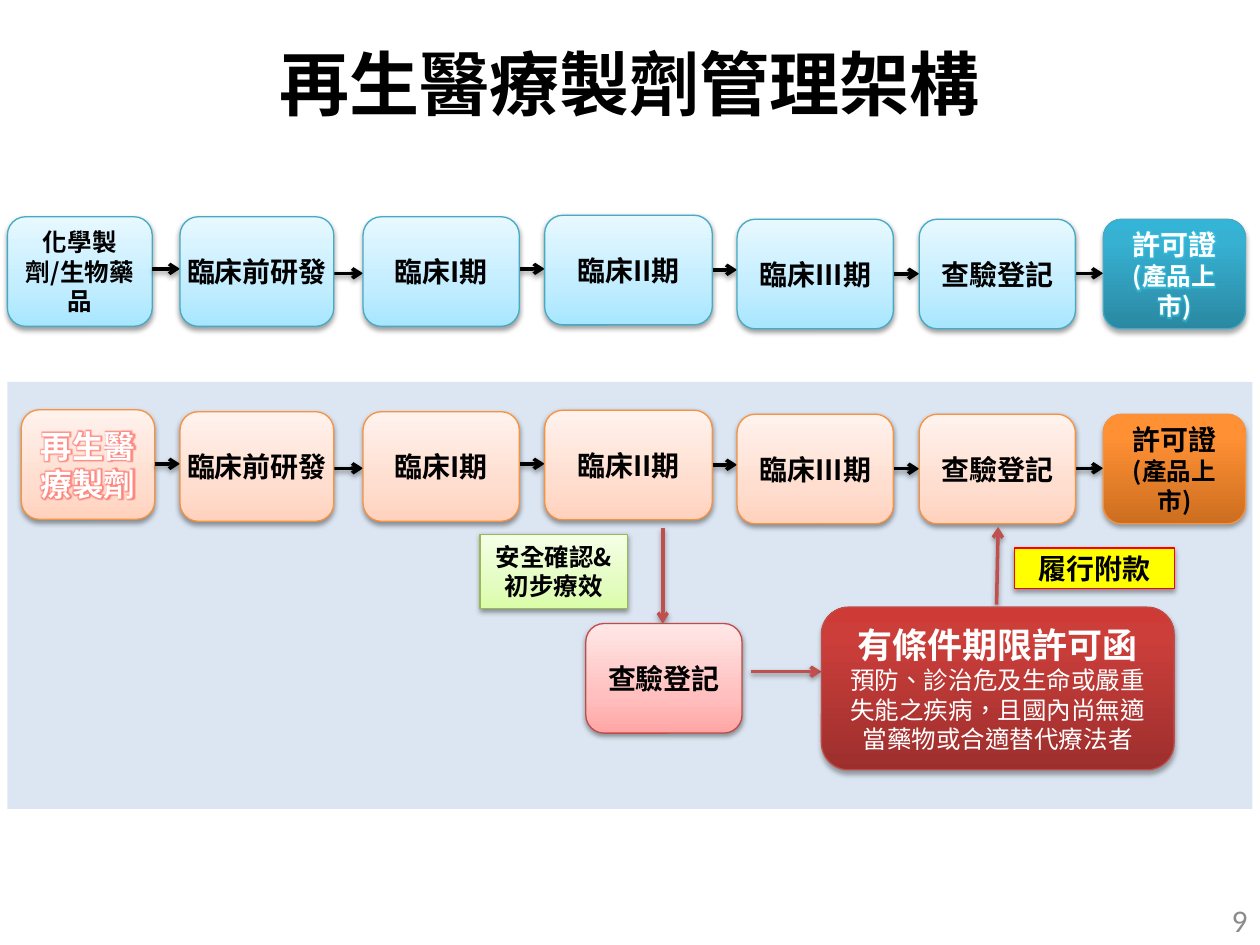
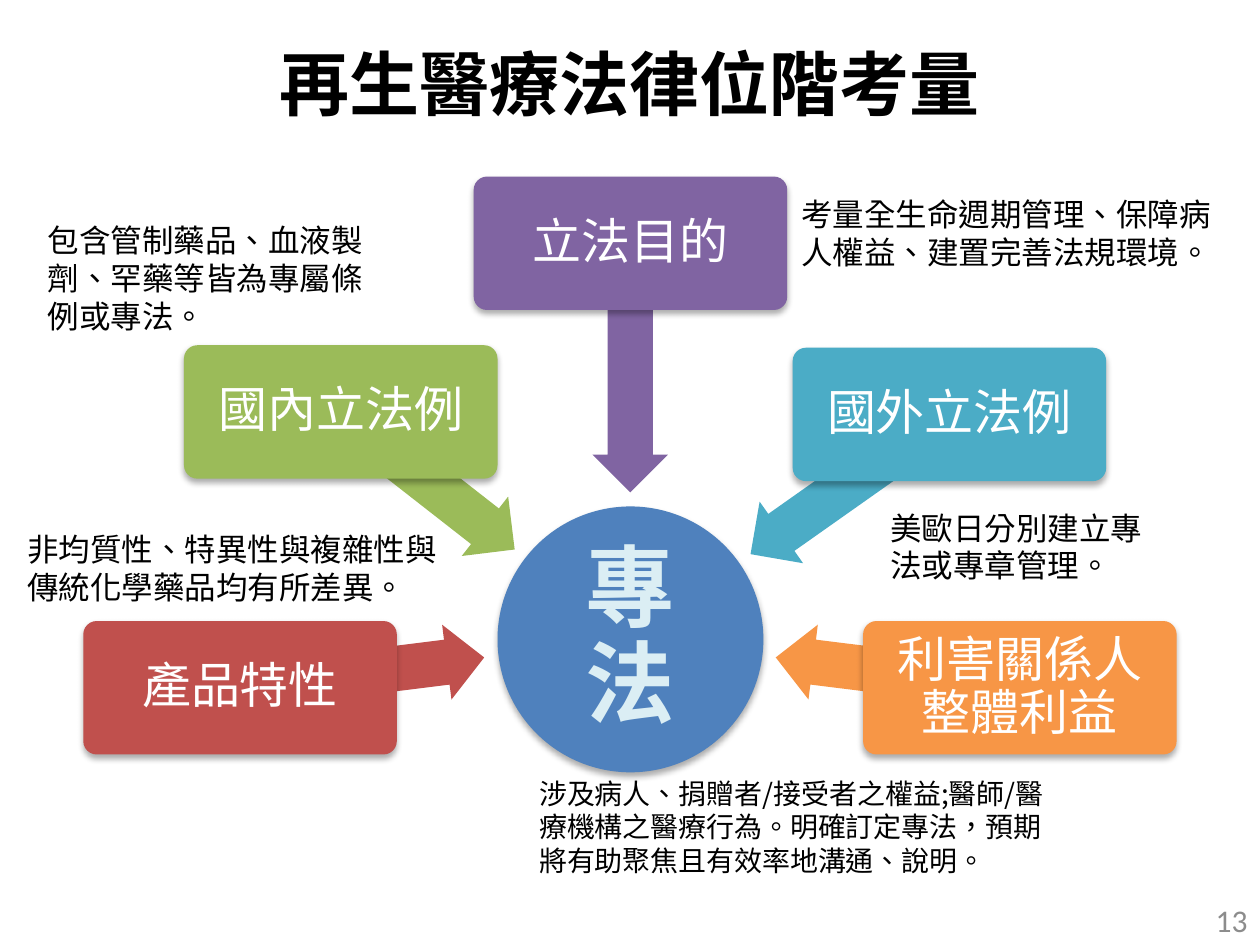
from lxml.etree import SubElement
from pptx import Presentation
from pptx.dml.color import RGBColor
from pptx.enum.shapes import MSO_CONNECTOR, MSO_SHAPE
from pptx.enum.text import MSO_ANCHOR, PP_ALIGN
from pptx.oxml import parse_xml
from pptx.oxml.ns import nsdecls, qn
from pptx.util import Cm, Pt

FONT, NUMBER_FONT = "Noto Sans CJK SC", "Calibri"
BLACK, WHITE, GREY, RED = "000000", "FFFFFF", "8C8C8C", "C0504D"
SOFT = (38, 3.1, 1.6)      # shadow: opacity in percent, blur, distance
STRONG = (35, 3.1, 1.8)
DEEP = (32, 3.5, 2.2)

# Gradient stops from bottom to top
PALE_BLUE = [(0, "A7E6FF"), (35, "C1EDFF"), (100, "E7F8FF")]
BLUE = [(0, "2A88A2"), (80, "37B1D2"), (100, "34B4D6")]
PALE_ORANGE = [(0, "FFD2BD"), (35, "FFDED0"), (100, "FFF2ED")]
ORANGE = [(0, "CC6E20"), (80, "FF9034"), (100, "FF9136")]
PALE_RED = [(0, "FFA6A5"), (35, "FFC0BF"), (100, "FFE7E7")]
DARK_RED = [(0, "9C2F2D"), (80, "CB3E3A"), (100, "CE3B37")]
PALE_GREEN = [(0, "DAFDA7"), (35, "E4FCC2"), (100, "F5FFE7")]


def rgb(value):
    return RGBColor.from_string(value)


def cm(*values):
    return [Cm(v) for v in values]


def gradient_xml(stops):
    stop_xml = "".join(
        f'<a:gs pos="{pos * 1000}"><a:srgbClr val="{color}"/></a:gs>'
        for pos, color in stops)
    return parse_xml(f'<a:gradFill rotWithShape="1" {nsdecls("a")}>'
                     f'<a:gsLst>{stop_xml}</a:gsLst>'
                     '<a:lin ang="16200000" scaled="0"/></a:gradFill>')


def add_shadow(shape, shadow):
    """Drop a black shadow straight down; None leaves the shape flat."""
    sp_pr = shape._element.spPr
    for old in sp_pr.findall(qn("a:effectLst")):
        sp_pr.remove(old)
    effects = SubElement(sp_pr, qn("a:effectLst"))
    if shadow:
        alpha, blur, dist = shadow
        outer = SubElement(effects, qn("a:outerShdw"), blurRad=str(Pt(blur)),
                           dist=str(Pt(dist)), dir="5400000", rotWithShape="0")
        color = SubElement(outer, qn("a:srgbClr"), val=BLACK)
        SubElement(color, qn("a:alpha"), val=str(alpha * 1000))


def add_glow(run, color):
    glow = parse_xml(f'<a:effectLst {nsdecls("a")}><a:glow rad="53100">'
                     f'<a:srgbClr val="{color}"><a:alpha val="60000"/></a:srgbClr>'
                     '</a:glow></a:effectLst>')
    run._r.rPr.find(qn("a:solidFill")).addnext(glow)


class Deck:
    def __init__(self):
        self.prs = Presentation()
        self.prs.slide_width, self.prs.slide_height = cm(25.4, 19.05)

    def new_slide(self, title, number):
        self.s = self.prs.slides.add_slide(self.prs.slide_layouts[5])
        sp = self.s.shapes.title
        sp.left, sp.top, sp.width, sp.height = cm(1.17, 0.69, 23.04, 1.6)
        sp.text_frame.vertical_anchor = MSO_ANCHOR.TOP
        self.fill_text(sp, [(title, 40, True)])
        self.text(number, (19.48, 18.03, 5.92, 1.02), 18, GREY,
                  PP_ALIGN.RIGHT, NUMBER_FONT)

    def fill_text(self, sp, lines, color=BLACK, align=PP_ALIGN.CENTER,
                  font=FONT, glow=None, spacing=None):
        """Fill a shape with paragraphs given as (text, size, bold)."""
        tf = sp.text_frame
        tf.word_wrap = True
        for i, (text, size, bold) in enumerate(lines):
            p = tf.paragraphs[0] if i == 0 else tf.add_paragraph()
            p.text = text
            p.alignment = align
            if spacing:
                p.line_spacing = spacing
            r = p.runs[0]
            r.font.size, r.font.bold, r.font.name = Pt(size), bold, font
            r.font.color.rgb = rgb(color)
            r._r.rPr.set("lang", "zh-TW")
            if glow:
                add_glow(r, glow)

    def text(self, text, box, size, color=BLACK, align=PP_ALIGN.LEFT, font=FONT):
        sp = self.s.shapes.add_textbox(*cm(*box))
        self.fill_text(sp, [(text, size, False)], color, align, font)

    def shape(self, kind, box, fill, line=None, shadow=None, lines=(),
              inset=None, **style):
        """Add a preset shape; fill is a hex colour or a list of stops."""
        sp = self.s.shapes.add_shape(kind, *cm(*box))
        if isinstance(fill, str):
            sp.fill.solid()
            sp.fill.fore_color.rgb = rgb(fill)
        else:
            sp._element.spPr.find(qn("a:prstGeom")).addnext(gradient_xml(fill))
        if line:
            sp.line.color.rgb = rgb(line)
            sp.line.width = Pt(0.75)
        else:
            sp.line.fill.background()
        add_shadow(sp, shadow)
        tf = sp.text_frame
        tf.vertical_anchor = MSO_ANCHOR.MIDDLE
        if inset is not None:
            tf.margin_left = tf.margin_right = Cm(inset)
        self.fill_text(sp, lines, **style)
        return sp

    def rounded(self, *args, **style):
        return self.shape(MSO_SHAPE.ROUNDED_RECTANGLE, *args, **style)

    def arrow(self, x1, y1, x2, y2, color=BLACK):
        cxn = self.s.shapes.add_connector(MSO_CONNECTOR.STRAIGHT,
                                          *cm(x1, y1, x2, y2))
        cxn.line.color.rgb = rgb(color)
        cxn.line.width = Pt(2)
        SubElement(cxn._element.spPr.find(qn("a:ln")), qn("a:tailEnd"),
                   type="arrow")
        add_shadow(cxn, SOFT)


BOX_H = 2.21
# text, left, top in the first row, width, side inset
STAGES = [("臨床前研發", 3.63, 4.37, 3.1, 0),
          ("臨床I期", 7.32, 4.37, 3.15, None),
          ("臨床II期", 10.98, 4.34, 3.38, None),
          ("臨床III期", 14.86, 4.42, 3.15, None),
          ("查驗登記", 18.53, 4.42, 3.15, None)]
LICENCE_X, LICENCE_Y, LICENCE_W = 22.24, 4.42, 2.87
ARROW_YS = [5.42, 5.51, 5.42, 5.44, 5.52, 5.51]


def process_row(deck, dy, start_right, pale, strong, line, licence_style):
    """Draw the stages, the licence and the arrows between them."""
    lefts = [stage[1] for stage in STAGES] + [LICENCE_X]
    rights = [start_right] + [x + w for _, x, _, w, _ in STAGES]
    for right, left, y in zip(rights, lefts, ARROW_YS):
        deck.arrow(right, y + dy, left, y + dy)
    for text, x, y, w, inset in STAGES:
        deck.rounded((x, y + dy, w, BOX_H), pale, line, SOFT,
                     [(text, 16, True)], inset)
    deck.rounded((LICENCE_X, LICENCE_Y + dy, LICENCE_W, BOX_H), strong, line,
                 STRONG, [("許可證", 16, True), ("(產品上市)", 14, True)],
                 **licence_style)


def framework_slide(deck):
    deck.new_slide("再生醫療製劑管理架構", "9")
    deck.shape(MSO_SHAPE.RECTANGLE, (0.15, 7.7, 25.1, 8.61), "DCE6F2")

    blue_line, orange_line, red_line = "46AAC5", "F69240", "BF4C48"
    deck.rounded((0.15, 4.37, 2.92, BOX_H), PALE_BLUE, blue_line, SOFT,
                 [("化學製劑/生物藥品", 14, True)])
    process_row(deck, 0, 3.07, PALE_BLUE, BLUE, blue_line,
                {"color": WHITE, "glow": "35C5E5"})
    deck.rounded((0.43, 8.26, 2.69, BOX_H), PALE_ORANGE, orange_line, SOFT,
                 [("再生醫療製劑", 18, True)], color=WHITE, glow="FF4B47")
    process_row(deck, 3.93, 3.12, PALE_ORANGE, ORANGE, orange_line, {})

    deck.arrow(13.36, 10.64, 13.36, 12.57, RED)
    deck.arrow(15.14, 13.54, 16.56, 13.54, RED)
    deck.arrow(20.09, 12.19, 20.12, 10.62, RED)
    deck.shape(MSO_SHAPE.RECTANGLE, (9.68, 10.77, 2.97, 1.5), PALE_GREEN,
               "98B955", SOFT, [("安全確認&初步療效", 14, True)])
    deck.rounded((11.81, 12.57, 3.15, BOX_H), PALE_RED, red_line, SOFT,
                 [("查驗登記", 16, True)])
    deck.rounded((16.56, 12.24, 7.11, 3.28), DARK_RED, red_line, STRONG,
                 [("有條件期限許可函", 20, True),
                  ("預防、診治危及生命或嚴重失能之疾病，且國內尚無適當藥物或合適替代療法者",
                   14, False)], color=WHITE)
    deck.shape(MSO_SHAPE.RECTANGLE, (20.45, 11.05, 3.23, 0.81), "FFFF00",
               "FF0000", SOFT, [("履行附款", 16, True)])


# text, colour, box left and top, arrow left, top, length and rotation
REASONS = [
    ("產品特性", RED, (1.68, 12.52), (4.83, 12.8, 4.95), 172.9),
    ("國內立法例", "9BBB59", (3.71, 6.96), (6.38, 8.94, 4.47), 218),
    ("立法目的", "8064A2", (9.55, 3.56), (10.19, 6.65, 5.03), 270),
    ("國外立法例", "4BACC6", (15.98, 7.01), (14.68, 8.99, 4.93), 324.8),
    ("利害關係人整體利益", "F79646", (17.4, 12.52), (15.62, 12.8, 4.95), 7.1)]
REMARKS = [
    ("非均質性、特異性與複雜性與傳統化學藥品均有所差異。", (0.3, 10.57, 9.3, 1.8), 18),
    ("美歐日分別建立專法或專章管理。", (17.7, 10.13, 6.2, 1.8), 18),
    ("包含管制藥品、血液製劑、罕藥等皆為專屬條例或專法。", (0.71, 4.34, 7.39, 2.57), 18),
    ("涉及病人、捐贈者/接受者之權益;醫師/醫療機構之醫療行為。"
     "明確訂定專法，預期將有助聚焦且有效率地溝通、說明。", (10.62, 15.52, 11.05, 3.18), 16),
    ("考量全生命週期管理、保障病人權益、建置完善法規環境。", (15.9, 3.81, 9.09, 1.8), 18)]


def legal_slide(deck):
    deck.new_slide("再生醫療法律位階考量", "13")
    deck.shape(MSO_SHAPE.OVAL, (10.03, 10.21, 5.36, 5.36), "4F81BD",
               shadow=DEEP, lines=[("專法", 51, True)], inset=0.1,
               color="DBEEF4", spacing=0.9)
    for text, color, corner, arrow_box, rotation in REASONS:
        arrow = deck.shape(MSO_SHAPE.LEFT_ARROW, (*arrow_box, 1.52), color)
        arrow.adjustments[0] = 0.6
        arrow.rotation = rotation
        box = deck.rounded((*corner, 6.32, 2.69), color, shadow=DEEP,
                           lines=[(text, 28, False)], inset=0.23,
                           color=WHITE, spacing=0.9)
        box.adjustments[0] = 0.1
    for text, box, size in REMARKS:
        deck.text(text, box, size)


def main():
    deck = Deck()
    framework_slide(deck)
    legal_slide(deck)
    deck.prs.save("out.pptx")


if __name__ == "__main__":
    main()
